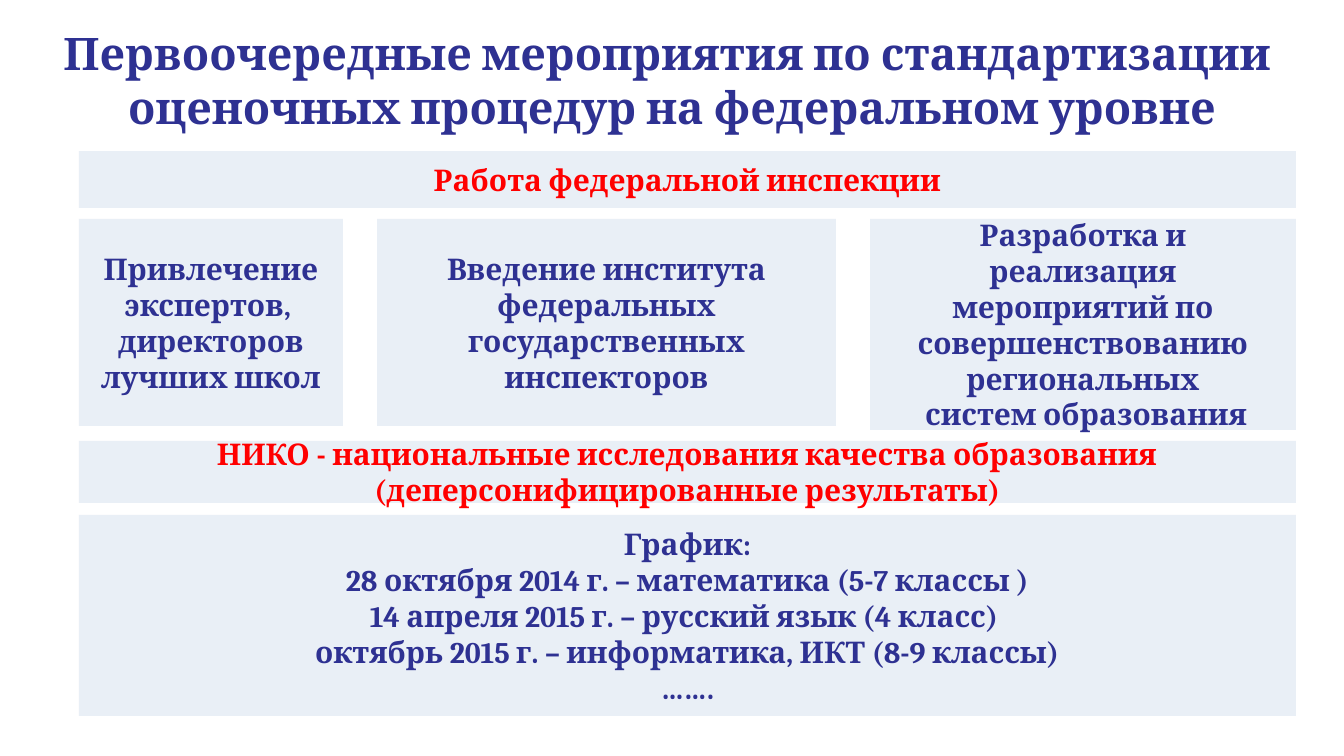
from copy import deepcopy

from lxml import etree
from pptx import Presentation
from pptx import util as u
from pptx.dml.color import RGBColor
from pptx.enum import shapes, text
from pptx.oxml.ns import qn

PX = 914400 / 134.4
NAVY, RED, PALE = "2E3192", "FF0000", "B9CDE5"
LEFT, WIDTH = 79, 1217


def px(length):
    """Turn pixels into EMU."""
    return u.Emu(round(length * PX))


def paint(color_format, color):
    """Give a fill or font colour its hex value."""
    color_format.rgb = RGBColor.from_string(color)


def write(frame, wording, size, color):
    """Fill a text frame with centred bold paragraphs."""
    frame.word_wrap = True
    frame.text = wording
    for paragraph in frame.paragraphs:
        paragraph.alignment = text.PP_ALIGN.CENTER
        for run in paragraph.runs:
            run.font.name, run.font.size, run.font.bold = "Cambria", u.Pt(size), True
            paint(run.font.color, color)
        for line_break in paragraph._p.findall(qn("a:br")):
            line_break.append(deepcopy(paragraph.runs[0]._r.rPr))


def cast_shadow(run):
    """Put a soft shadow below the letters of a run."""
    effects = etree.Element(qn("a:effectLst"))
    shadow = etree.SubElement(effects, qn("a:outerShdw"), blurRad="38100",
                              dist="38100", dir="5400000", algn="tl")
    tint = etree.SubElement(shadow, qn("a:srgbClr"), val="000000")
    etree.SubElement(tint, qn("a:alpha"), val="43000")
    run._r.rPr.find(qn("a:solidFill")).addnext(effects)


def add_title(slide, left, top, width, height, wording):
    """Place the shadowed heading."""
    title = slide.shapes.add_textbox(*map(px, (left, top, width, height)))
    write(title.text_frame, wording, 24, NAVY)
    title.text_frame.auto_size = text.MSO_AUTO_SIZE.SHAPE_TO_FIT_TEXT
    for paragraph in title.text_frame.paragraphs:
        for run in paragraph.runs:
            cast_shadow(run)


def add_panel(slide, left, top, width, height, wording, color=NAVY):
    """Place one translucent panel with middle-anchored wording."""
    panel = slide.shapes.add_shape(shapes.MSO_SHAPE.RECTANGLE,
                                   *map(px, (left, top, width, height)))
    panel.shadow.inherit = False
    panel.line.fill.background()
    panel.fill.solid()
    paint(panel.fill.fore_color, PALE)
    tint = panel._element.spPr.find(qn("a:solidFill"))[0]
    etree.SubElement(tint, qn("a:alpha"), val="31000")
    panel.text_frame.vertical_anchor = text.MSO_ANCHOR.MIDDLE
    write(panel.text_frame, wording, 16, color)


def add_measures(slide, left, top, gap, measures):
    """Lay the inspection measures side by side."""
    for width, height, wording in measures:
        add_panel(slide, left, top, width, height, wording)
        left += width + gap


def main():
    """Build and save the slide."""
    deck = Presentation()
    deck.slide_width, deck.slide_height = px(1344), px(756)
    slide = deck.slides.add_slide(deck.slide_layouts[6])
    add_title(slide, 0, 19, 1344, 122,
              "Первоочередные мероприятия по стандартизации \n"
              "оценочных процедур на федеральном уровне")
    add_panel(slide, LEFT, 151, WIDTH, 57, "Работа федеральной инспекции", RED)
    add_measures(slide, LEFT, 219, 34, [
        (264, 207, "Привлечение экспертов, \vдиректоров лучших школ"),
        (459, 207, "Введение института федеральных\nгосударственных инспекторов"),
        (426, 211, "Разработка и реализация мероприятий по совершенствованию "
                   "региональных\n систем образования"),
    ])
    add_panel(slide, LEFT, 441, WIDTH, 62,
              "НИКО - национальные исследования качества образования "
              "(деперсонифицированные результаты)", RED)
    add_panel(slide, LEFT, 515, WIDTH, 201,
              "График:\n"
              "28 октября 2014 г. – математика (5-7 классы )\n"
              "14 апреля 2015 г. – русский язык (4 класс) \n"
              "октябрь 2015 г. – информатика, ИКТ (8-9 классы)\n"
              "…….")
    deck.save("out.pptx")


if __name__ == "__main__":
    main()
